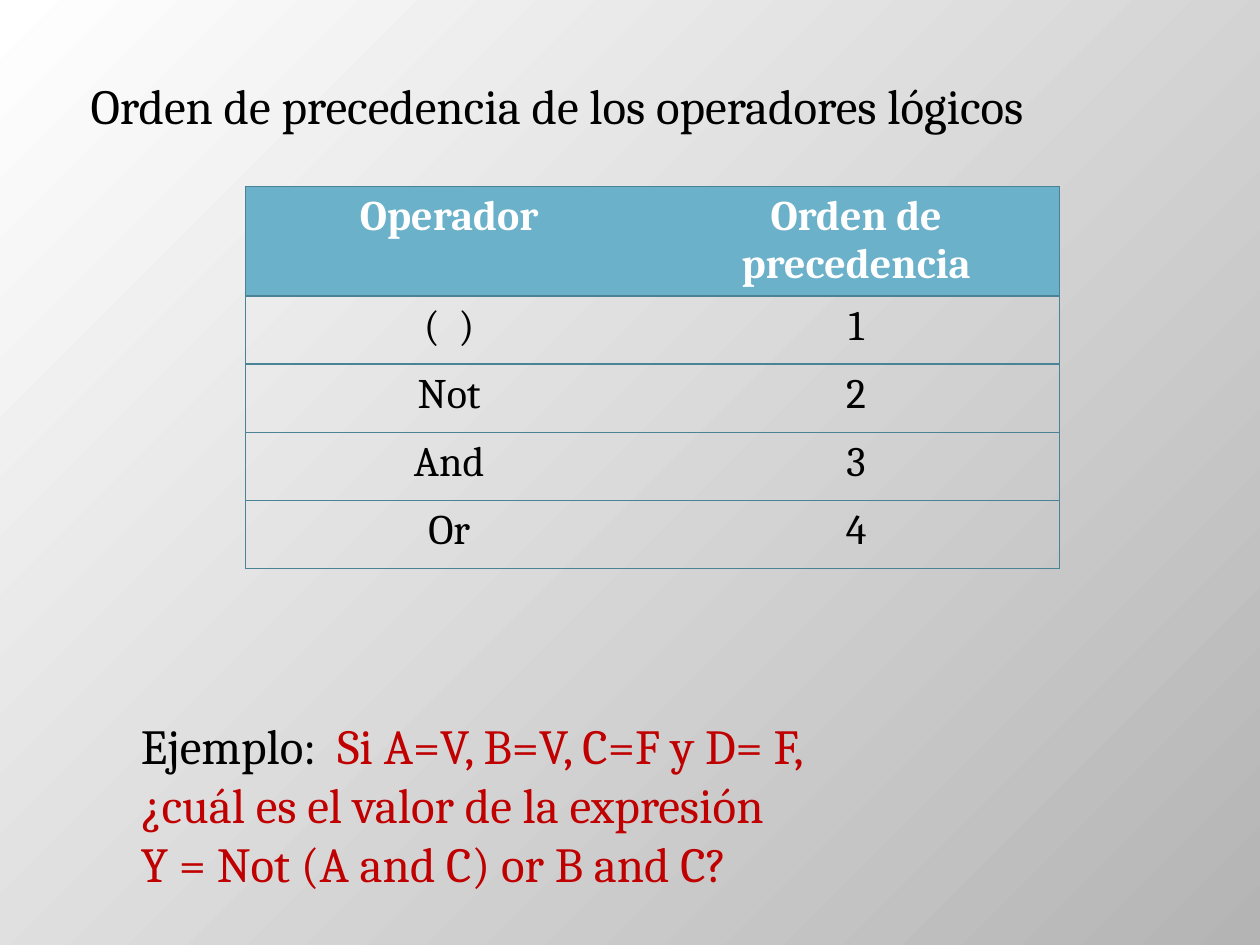
from lxml.etree import SubElement
from pptx import Presentation
from pptx.dml.color import RGBColor
from pptx.enum.text import MSO_ANCHOR, MSO_AUTO_SIZE, PP_ALIGN
from pptx.oxml import parse_xml
from pptx.oxml.ns import nsdecls, qn
from pptx.util import Inches, Pt

COLORS = {
    "light": "FFFFFF", "dark": "B4B4B4", "header": "6BB1C9",
    "rule": "4A8296", "ink": "000000", "accent": "C00000",
}
BODY = {"name": "Cambria", "size": Pt(28), "bold": False}
CELL = {**BODY, "size": Pt(24)}
HEADING = {**CELL, "bold": True}


def write(paragraph, text, look, color):
    run = paragraph.add_run()
    run.text = text
    for key, value in look.items():
        setattr(run.font, key, value)
    run.font.color.rgb = RGBColor.from_string(COLORS[color])


def add_borders(cell, ruled):
    """Rule the named edges of a cell and clear the others."""
    props = cell._tc.get_or_add_tcPr()
    for place, edge in enumerate("LRTB"):
        line = parse_xml(f'<a:ln{edge} {nsdecls("a")} w="{Pt(0.75)}"/>')
        if edge in ruled:
            fill = SubElement(line, qn("a:solidFill"))
            SubElement(fill, qn("a:srgbClr"), val=COLORS["rule"])
        else:
            SubElement(line, qn("a:noFill"))
        props.insert(place, line)


prs = Presentation()
prs.slide_width, prs.slide_height = Inches(10), Inches(7.5)
slide = prs.slides.add_slide(prs.slide_layouts[5])

# Background: grey gradient spreading from the top left corner
backdrop = slide.background.fill
backdrop.gradient()
for stop, shade in zip(backdrop.gradient_stops, ("light", "dark")):
    stop.color.rgb = RGBColor.from_string(COLORS[shade])
direction = next(slide.element.iter(qn("a:lin")))
direction.getparent().replace(direction, parse_xml(
    f'<a:path {nsdecls("a")} path="circle">'
    '<a:fillToRect r="100000" b="100000"/></a:path>'))

# Title
title = slide.shapes.title
title.left, title.top = Inches(0.47), Inches(0.55)
title.width, title.height = Inches(9), Inches(1.25)
frame_format = {"vertical_anchor": MSO_ANCHOR.TOP, "word_wrap": True,
                "auto_size": MSO_AUTO_SIZE.NONE, "margin_left": Inches(0.25)}
for key, value in frame_format.items():
    setattr(title.text_frame, key, value)
heading = title.text_frame.paragraphs[0]
heading.alignment = PP_ALIGN.LEFT
heading.space_before = Pt(5.6)
write(heading, "Orden de precedencia de los operadores lógicos", BODY, "ink")

# Precedence table
precedence = [("Operador", "Orden de precedencia"),
              ("(  )", "1"), ("Not", "2"), ("And", "3"), ("Or", "4")]
table = slide.shapes.add_table(len(precedence), 2, Inches(1.95), Inches(1.48),
                               Inches(6.46), Inches(3.05)).table
for r, row in enumerate(precedence):
    table.rows[r].height = Inches(0.54 if r else 0.87)
    for c, text in enumerate(row):
        cell = table.cell(r, c)
        if r:
            cell.fill.background()
        else:
            cell.fill.solid()
            cell.fill.fore_color.rgb = RGBColor.from_string(COLORS["header"])
        add_borders(cell, "TB" + "LR"[c])
        entry = cell.text_frame.paragraphs[0]
        entry.alignment = PP_ALIGN.CENTER
        write(entry, text, CELL if r else HEADING, "ink" if r else "light")

# Worked example
example = slide.shapes.add_textbox(Inches(1.02), Inches(5.63),
                                   Inches(8.2), Inches(1.51)).text_frame
example.word_wrap = True
example.auto_size = MSO_AUTO_SIZE.SHAPE_TO_FIT_TEXT
question = ["Si A=V, B=V, C=F y D= F,", "¿cuál es el valor de la expresión",
            "Y = Not (A and C) or B and C?"]
write(example.paragraphs[0], "Ejemplo:  ", BODY, "ink")
for i, text in enumerate(question):
    paragraph = example.add_paragraph() if i else example.paragraphs[0]
    write(paragraph, text, BODY, "accent")

prs.save("out.pptx")
